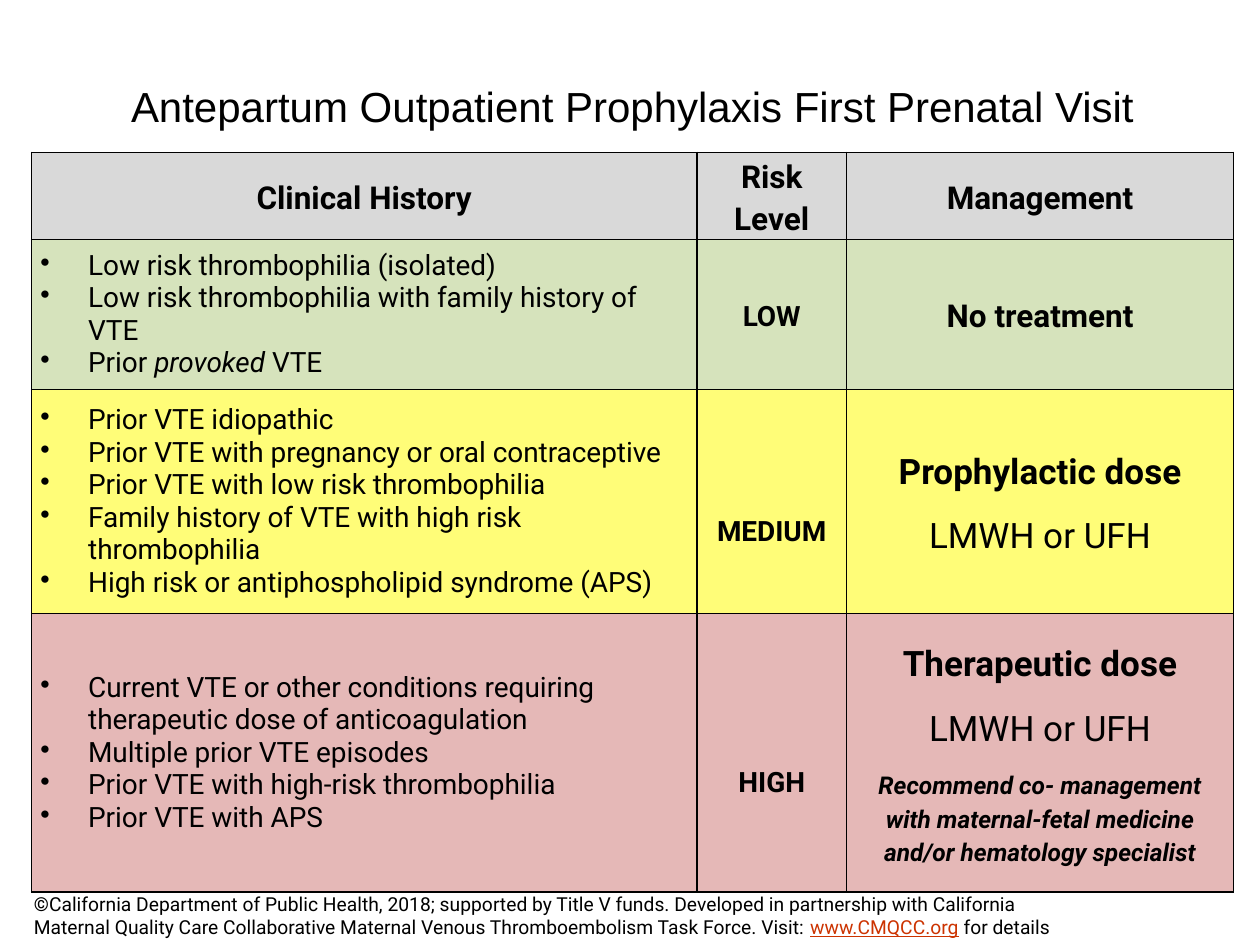
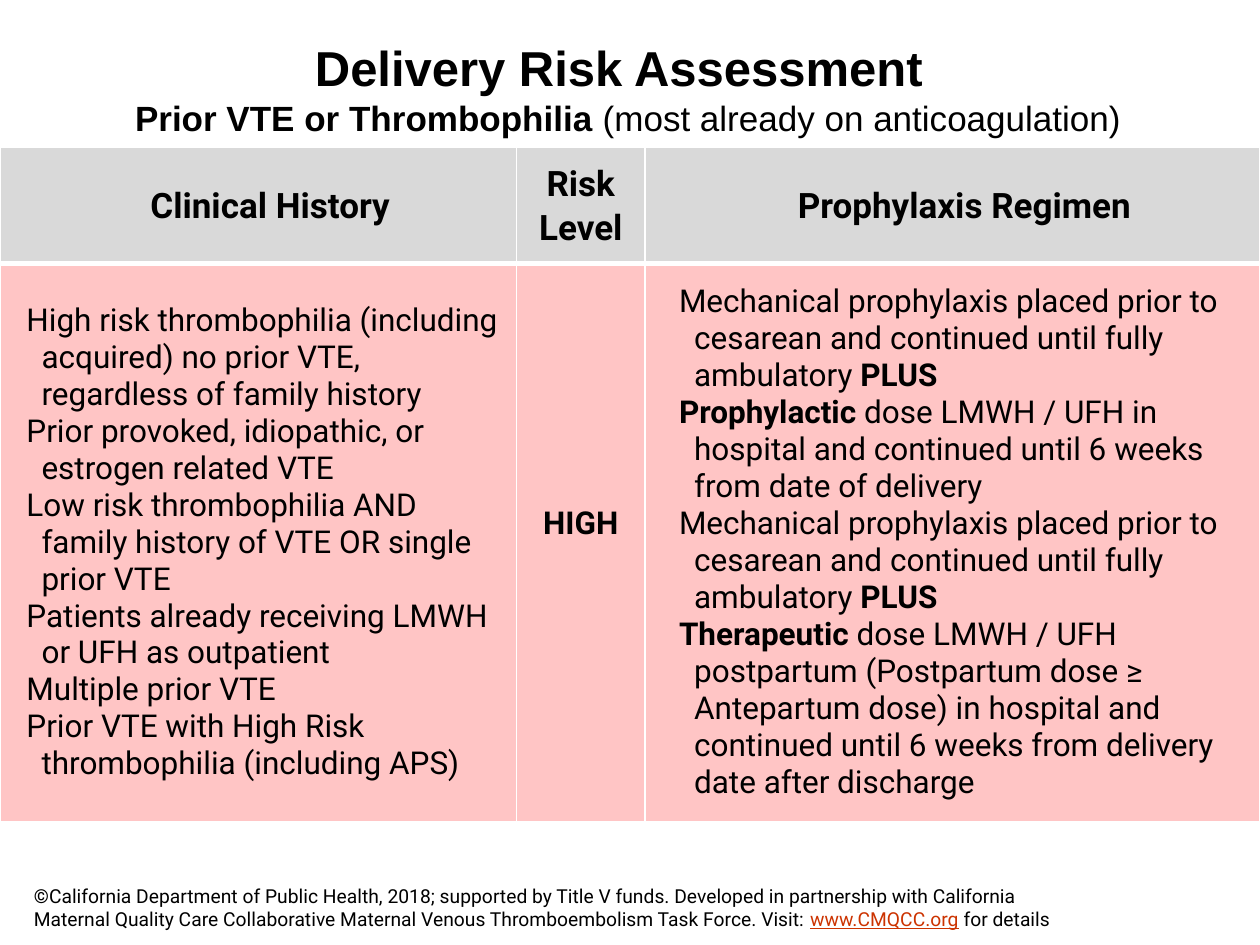
from lxml.etree import SubElement
from pptx import Presentation
from pptx.dml.color import RGBColor
from pptx.enum.text import MSO_ANCHOR, PP_ALIGN
from pptx.oxml import parse_xml
from pptx.oxml.ns import nsdecls, qn
from pptx.util import Inches, Pt

COLORS = {
    "ink": "000000",
    "paper": "FFFFFF",
    "link": "CC3300",
    "header": "D9D9D9",
    "low": "D6E3BC",
    "medium": "FFFD78",
    "high": "E5B8B7",
    "delivery": "FFC5C5",
}
BOLD = {"bold": True}
CENTERED = {"alignment": PP_ALIGN.CENTER}
SPACED = {**CENTERED, "line_spacing": 1.15, "space_after": Pt(10)}
TIGHT = {**CENTERED, "line_spacing": 1.07}
BULLETED = {"left": 0.38, "hanging": 0.38, "bullet": "•"}
HISTORY = {"left": 0.25, "hanging": 0.12}
REGIMEN = {"left": 0.31, "hanging": 0.12}
SIDES = ("left", "right", "top", "bottom")
FOOTER = [
    ("©", BOLD),
    "California Department of Public Health, 2018; supported by Title V funds. "
    "Developed in partnership with California Maternal Quality Care Collaborative "
    "Maternal Venous Thromboembolism Task Force. Visit: ",
    ("www.CMQCC.org", {"color": "link", "underline": True}),
    " for details",
]


class RiskDeck:
    def __init__(self):
        self.deck = Presentation()
        self.deck.slide_width = Inches(10)
        self.deck.slide_height = Inches(7.5)
        self.page = None

    def new_page(self):
        self.page = self.deck.slides.add_slide(self.deck.slide_layouts[6])
        fill = self.page.background.fill
        fill.solid()
        fill.fore_color.rgb = RGBColor.from_string(COLORS["paper"])

    def format_para(self, para, layout):
        values = dict(layout)
        left = values.pop("left", 0)
        hanging = values.pop("hanging", 0)
        bullet = values.pop("bullet", None)
        properties = para._p.get_or_add_pPr()
        properties.set("marL", str(Inches(left)))
        properties.set("indent", str(-Inches(hanging)))
        if bullet:
            SubElement(properties, qn("a:buChar"), char=bullet)
        for name, value in values.items():
            setattr(para, name, value)

    def add_span(self, para, text, look):
        span = para.add_run()
        span.text = text
        values = {"name": "Roboto", "color": "ink", "bold": False, **look}
        span.font.color.rgb = RGBColor.from_string(COLORS[values.pop("color")])
        values["size"] = Pt(values["size"])
        for name, value in values.items():
            setattr(span.font, name, value)

    def add_paras(self, frame, paras, look, layout):
        for number, spans in enumerate(paras):
            para = frame.add_paragraph() if number else frame.paragraphs[0]
            self.format_para(para, layout)
            for span in [spans] if isinstance(spans, str) else spans:
                text, change = (span, {}) if isinstance(span, str) else span
                self.add_span(para, text, {**look, **change})

    def text_box(self, place, paras, look, layout, **frame_values):
        box = self.page.shapes.add_textbox(*map(Inches, place))
        frame = box.text_frame
        for name, value in {"word_wrap": True, **frame_values}.items():
            setattr(frame, name, value)
        self.add_paras(frame, paras, look, layout)
        return frame

    def title(self, place, paras, size, **frame_values):
        look = {"name": "Arial", "size": size}
        return self.text_box(place, paras, look, CENTERED, **frame_values)

    def footer(self, top):
        self.text_box((0.17, top, 8.42, 0.47), [FOOTER], {"size": 11}, {})

    def table(self, place, widths, heights):
        grid = self.page.shapes.add_table(
            len(heights), len(widths), *map(Inches, place)).table
        grid.first_row = grid.horz_banding = False
        for column, width in zip(grid.columns, widths):
            column.width = Inches(width)
        for row, height in zip(grid.rows, heights):
            row.height = Inches(height)
        return grid

    def border(self, cell, color, widths):
        properties = cell._tc.get_or_add_tcPr()
        for index, (tag, width) in enumerate(zip(("lnL", "lnR", "lnT", "lnB"), widths)):
            properties.insert(index, parse_xml(
                f'<a:{tag} {nsdecls("a")} w="{Pt(width)}"><a:solidFill>'
                f'<a:srgbClr val="{COLORS[color]}"/></a:solidFill></a:{tag}>'))

    def cell(self, cell, paras, look, layout, fill, insets, line, widths):
        cell.vertical_anchor = MSO_ANCHOR.MIDDLE
        for side, inset in zip(SIDES, insets):
            setattr(cell, f"margin_{side}", Inches(inset))
        cell.fill.solid()
        cell.fill.fore_color.rgb = RGBColor.from_string(COLORS[fill])
        self.border(cell, line, widths)
        self.add_paras(cell.text_frame, paras, look, layout)


def build_prenatal_visit(risk):
    risk.new_page()
    risk.title((0.53, 0.46, 8.98, 0.75),
               ["Antepartum Outpatient Prophylaxis First Prenatal Visit"], 24,
               vertical_anchor=MSO_ANCHOR.MIDDLE)
    grid = risk.table((0.25, 1.21, 9.54, 5.85), (5.28, 1.19, 3.07),
                      (0.67, 1.19, 1.78, 2.21))
    dose = {"size": 20}
    strong_dose = {"size": 20, "bold": True}
    advice = {"size": 14, "bold": True, "italic": True}
    levels = [
        ("low", 0, "LOW",
         ["Low risk thrombophilia (isolated)",
          "Low risk thrombophilia with family history of VTE",
          ["Prior ", ("provoked ", {"italic": True}), "VTE"]],
         [[("No treatment", BOLD)]]),
        ("medium", 0.44, "MEDIUM",
         ["Prior VTE idiopathic",
          "Prior VTE with pregnancy or oral contraceptive",
          "Prior VTE with low risk thrombophilia",
          "Family history of VTE with high risk thrombophilia",
          "High risk or antiphospholipid syndrome (APS)"],
         [[("Prophylactic dose", strong_dose)], [("LMWH or UFH", dose)]]),
        ("high", 0.44, "HIGH",
         ["Current VTE or other conditions requiring therapeutic dose of anticoagulation",
          "Multiple prior VTE episodes",
          "Prior VTE with high-risk thrombophilia",
          "Prior VTE with APS"],
         [[("Therapeutic dose", strong_dose)], [("LMWH or UFH", dose)],
          [("Recommend co- management with maternal-fetal medicine "
            "and/or hematology specialist", advice)]]),
    ]

    def fill_cell(row, column, paras, look, layout, fill, top=0):
        risk.cell(grid.cell(row, column), paras, look, layout, fill,
                  (0.07, 0.07, top, 0), "ink", (1, 1, 1, 1))

    for column, heading in enumerate(("Clinical History", "Risk Level", "Management")):
        fill_cell(0, column, [heading], {"size": 18, **BOLD}, SPACED, "header")
    for row, (fill, top, level, history, management) in enumerate(levels, 1):
        fill_cell(row, 0, history, {"size": 16}, BULLETED, fill)
        fill_cell(row, 1, [level], {"size": 16, **BOLD}, SPACED, fill, top)
        fill_cell(row, 2, management, {"size": 18}, SPACED, fill)
    risk.footer(7.03)


def build_delivery_assessment(risk):
    risk.new_page()
    frame = risk.title(
        (0.42, 0.5, 8.98, 0.75),
        [[("Delivery Risk Assessment", {"size": 28, **BOLD})],
         [("Prior VTE or Thrombophilia ", BOLD), "(most already on anticoagulation)"]],
        20, vertical_anchor=MSO_ANCHOR.BOTTOM, margin_top=0, margin_bottom=Inches(0.15))
    risk.format_para(frame.paragraphs[1], {"left": 0.15})
    risk.footer(6.97)
    grid = risk.table((0, 1.17, 10, 5.35), (4.1, 1.02, 4.88), (0.92, 4.43))
    mechanical = ["Mechanical prophylaxis placed prior to cesarean and continued "
                  "until fully ambulatory ", ("PLUS", BOLD)]
    history = [
        "High risk thrombophilia (including acquired) no prior VTE, "
        "regardless of family history",
        "Prior provoked, idiopathic, or estrogen related VTE",
        "Low risk thrombophilia AND family history of VTE OR single prior VTE",
        "Patients already receiving LMWH or UFH as outpatient",
        "Multiple prior VTE",
        "Prior VTE with High Risk thrombophilia (including APS)",
    ]
    regimen = [
        mechanical,
        [("Prophylactic", BOLD),
         " dose LMWH / UFH in hospital and continued until 6 weeks from date of delivery"],
        mechanical,
        [("Therapeutic", BOLD),
         " dose LMWH / UFH postpartum (Postpartum dose ≥ Antepartum dose) in hospital "
         "and continued until 6 weeks from delivery date after discharge"],
    ]
    headings = [("Clinical History", 0.19), ("Risk Level", 0), ("Prophylaxis Regimen", 0.19)]
    for column, (heading, left) in enumerate(headings):
        risk.cell(grid.cell(0, column), [heading], {"size": 20, **BOLD},
                  {**TIGHT, "left": left}, "header",
                  (0.08, 0.08, 0.05, 0.05), "paper", (1, 1, 1, 3))
    body = [(history, {}, HISTORY, 0.05), (["HIGH"], BOLD, CENTERED, 0.34),
            (regimen, {}, REGIMEN, 0.05)]
    for column, (paras, look, layout, bottom) in enumerate(body):
        risk.cell(grid.cell(1, column), paras, {"size": 18, **look}, layout, "delivery",
                  (0.08, 0.08, 0.05, bottom), "paper", (1, 1, 3, 1))


def main():
    risk = RiskDeck()
    build_prenatal_visit(risk)
    build_delivery_assessment(risk)
    risk.deck.save("out.pptx")


if __name__ == "__main__":
    main()
